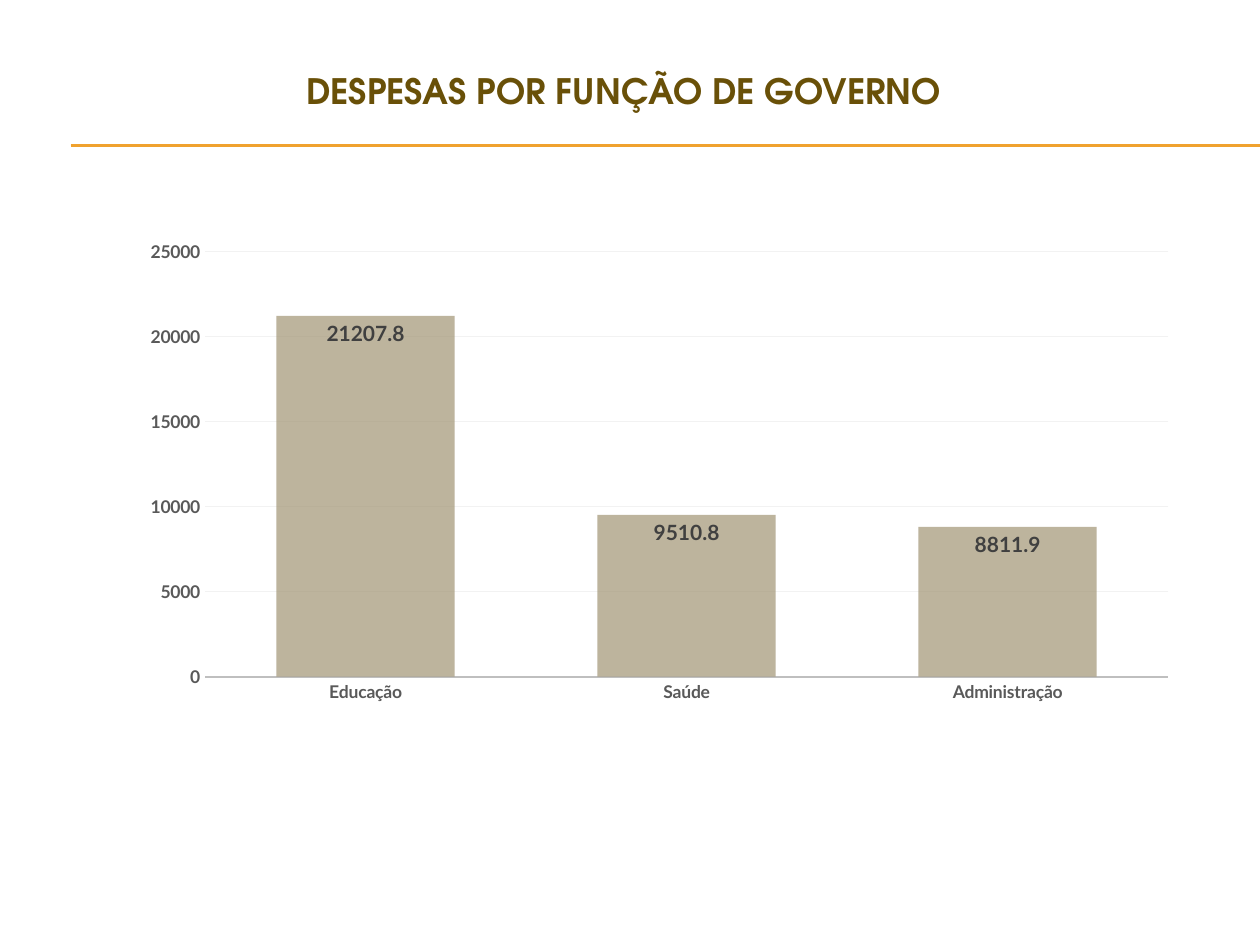
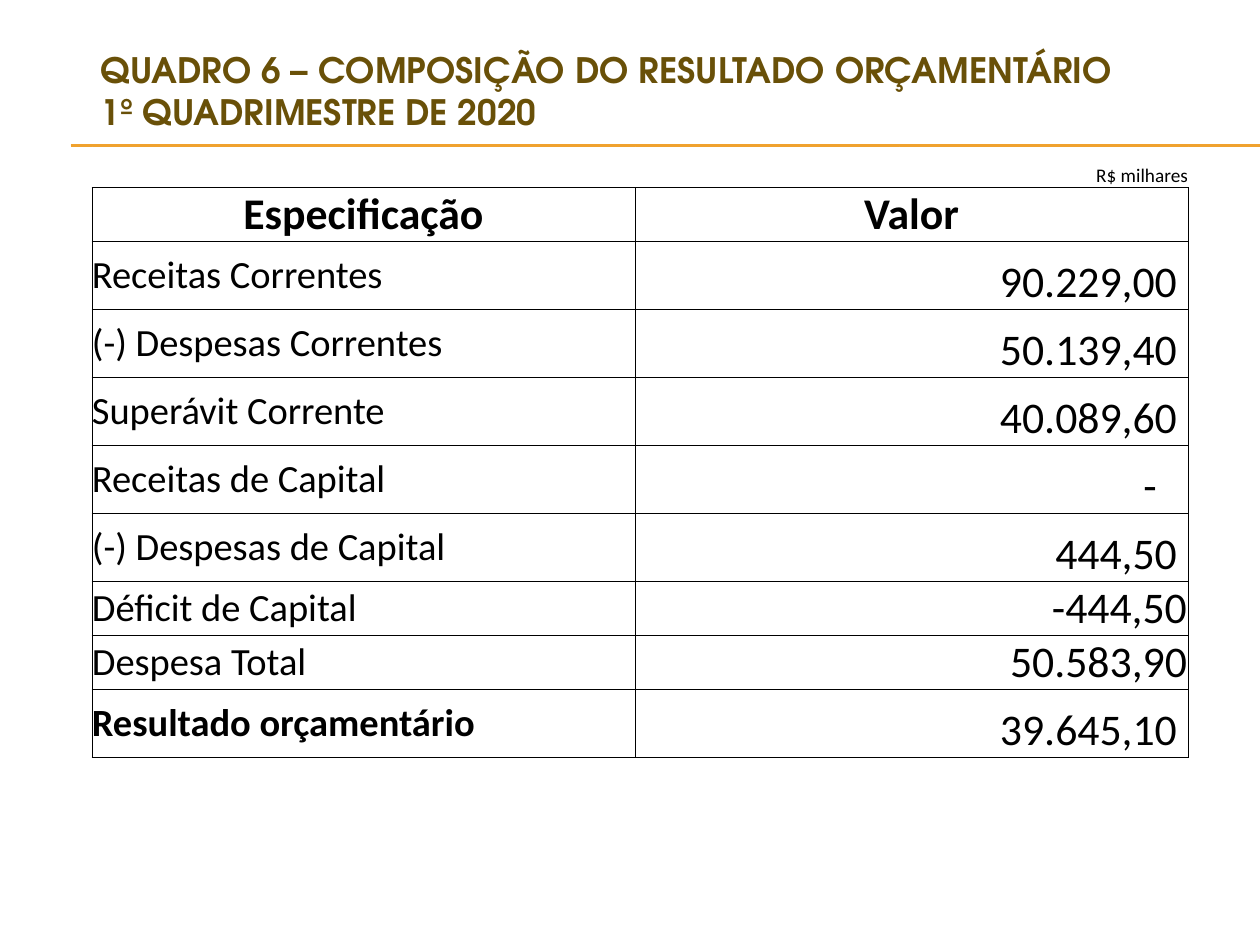
from dataclasses import dataclass

from lxml import etree
from pptx import Presentation
from pptx.chart.data import CategoryChartData
from pptx.dml.color import RGBColor
from pptx.enum.chart import XL_CHART_TYPE, XL_LABEL_POSITION, XL_TICK_MARK
from pptx.enum.shapes import MSO_CONNECTOR
from pptx.enum.text import MSO_ANCHOR, MSO_AUTO_SIZE, PP_ALIGN
from pptx.oxml.ns import qn
from pptx.util import Inches, Pt

LEFT, CENTER, RIGHT = PP_ALIGN.LEFT, PP_ALIGN.CENTER, PP_ALIGN.RIGHT
MIDDLE, BOTTOM = MSO_ANCHOR.MIDDLE, MSO_ANCHOR.BOTTOM
COLUMNS = XL_CHART_TYPE.COLUMN_CLUSTERED
INSIDE_END = XL_LABEL_POSITION.INSIDE_END
NO_TICK = XL_TICK_MARK.NONE
STRAIGHT = MSO_CONNECTOR.STRAIGHT
NO_AUTOFIT = MSO_AUTO_SIZE.NONE


@dataclass(frozen=True)
class Theme:
    title_font: str = "TeX Gyre Adventor"
    chart_font: str = "Lato"
    table_font: str = "Calibri"
    title: str = "695008"
    rule: str = "F0A22E"
    bar: str = "A19574"
    axis_text: str = "595959"
    axis_line: str = "BFBFBF"
    grid: str = "F2F2F2"
    label: str = "404040"
    ink: str = "000000"
    title_size: int = 20
    axis_size: int = 10
    label_size: int = 12
    unit_size: int = 11
    item_size: int = 22
    value_size: int = 25


THEME = Theme()

CHART_TITLE = "DESPESAS POR FUNÇÃO DE GOVERNO"
EXPENSES = {"Educação": 21207.8, "Saúde": 9510.8, "Administração": 8811.9}
PLOT_AREA = {"x": 0.155, "y": 0.144, "w": 0.83, "h": 0.525}

TABLE_TITLE = "QUADRO 6 – COMPOSIÇÃO DO RESULTADO ORÇAMENTÁRIO\v1º QUADRIMESTRE DE 2020"
UNIT = "R$ milhares"
HEADINGS = ("Especificação", "Valor")
FLUSH, INDENTED, DASH = 0.01, 0.09, 0.25
BUDGET_ROWS = [
    ("Receitas Correntes", "90.229,00", INDENTED),
    ("(-) Despesas Correntes", "50.139,40", INDENTED),
    ("Superávit Corrente", "40.089,60", INDENTED),
    ("Receitas de Capital", "-", DASH),
    ("(-) Despesas de Capital", "444,50", INDENTED),
    ("Déficit de Capital", "-444,50", FLUSH),
    ("Despesa Total", "50.583,90", FLUSH),
    ("Resultado orçamentário", "39.645,10", INDENTED),
]
COLUMN_WIDTHS = (4.31, 2.1, 2.29)
UNIT_HEIGHT, HEADING_HEIGHT, TALL_ROW, SHORT_ROW = 0.32, 0.42, 0.54, 0.43
RULE_LEFT, RULE_TOPS = 0.56, (1.15, 1.16)


def style_font(font, name, size, color, bold=False):
    font.name = name
    font.size = Pt(size)
    font.bold = bold
    font.color.rgb = RGBColor.from_string(color)


def style_line(line, color, width):
    line.color.rgb = RGBColor.from_string(color)
    line.width = Pt(width)


def add_titled_slide(presentation, text, alignment):
    slide = presentation.slides.add_slide(presentation.slide_layouts[5])
    title = slide.shapes.title
    title.left, title.top = Inches(0.7), Inches(0.55)
    title.width, title.height = Inches(8.5), Inches(0.33)
    frame = title.text_frame
    frame.text = text
    frame.auto_size = NO_AUTOFIT
    frame.vertical_anchor = MIDDLE
    paragraph = frame.paragraphs[0]
    paragraph.alignment = alignment
    for run in paragraph.runs:
        style_font(run.font, THEME.title_font, THEME.title_size, THEME.title, True)
    return slide


def add_master_rules(presentation, slide):
    master_tree = presentation.slide_master.element.cSld.spTree
    for top in RULE_TOPS:
        rule = slide.shapes.add_connector(
            STRAIGHT, Inches(RULE_LEFT), Inches(top), presentation.slide_width, Inches(top)
        )
        style_line(rule.line, THEME.rule, 0.75)
        etree.SubElement(rule.element.spPr, qn("a:effectLst"))
        master_tree.append(rule.element)


def place_plot_area(chart):
    plot_area = chart.element.find(".//" + qn("c:plotArea"))
    for layout in plot_area.findall(qn("c:layout")):
        plot_area.remove(layout)
    layout = etree.Element(qn("c:layout"))
    plot_area.insert(0, layout)
    manual = etree.SubElement(layout, qn("c:manualLayout"))
    settings = {"layoutTarget": "inner", "xMode": "edge", "yMode": "edge", **PLOT_AREA}
    for name, value in settings.items():
        etree.SubElement(manual, qn(f"c:{name}")).set("val", str(value))


def add_expense_chart(slide):
    data = CategoryChartData()
    data.categories = list(EXPENSES)
    data.add_series("Series 1", list(EXPENSES.values()))
    chart = slide.shapes.add_chart(
        COLUMNS, Inches(0.2), Inches(1.07), Inches(9.21), Inches(6.43), data
    ).chart
    chart.has_title = chart.has_legend = False
    style_font(chart.font, THEME.chart_font, THEME.axis_size, THEME.ink)
    place_plot_area(chart)

    for axis in (chart.category_axis, chart.value_axis):
        axis.major_tick_mark = axis.minor_tick_mark = NO_TICK
        style_font(axis.tick_labels.font, THEME.chart_font, THEME.axis_size, THEME.axis_text, True)
    style_line(chart.category_axis.format.line, THEME.axis_line, 1.25)
    values = chart.value_axis
    values.minimum_scale, values.maximum_scale, values.major_unit = 0, 25000, 5000
    values.format.line.fill.background()
    style_line(values.major_gridlines.format.line, THEME.grid, 0.75)

    plot = chart.plots[0]
    plot.vary_by_categories = False
    plot.gap_width, plot.overlap = 80, 25
    series = plot.series[0]
    series.format.fill.solid()
    series.format.fill.fore_color.rgb = RGBColor.from_string(THEME.bar)
    bar_color = series.format.element if hasattr(series.format, "element") else series._element
    bar_color = bar_color.find(".//" + qn("a:srgbClr"))
    etree.SubElement(bar_color, qn("a:alpha")).set("val", "70000")
    labels = series.data_labels
    labels.show_value = True
    labels.position = INSIDE_END
    style_font(labels.font, THEME.chart_font, THEME.label_size, THEME.label, True)


def draw_borders(cell, edges):
    properties = cell._tc.get_or_add_tcPr()
    for edge in edges:
        line = etree.SubElement(properties, qn(f"a:ln{edge}"), w=str(Pt(0.5)))
        fill = etree.SubElement(line, qn("a:solidFill"))
        etree.SubElement(fill, qn("a:srgbClr"), val=THEME.ink)


def write_cell(cell, text, size, alignment, anchor=BOTTOM, bold=False, right_margin=0):
    cell.vertical_anchor = anchor
    cell.margin_right = Inches(right_margin)
    cell.text_frame.text = text
    paragraph = cell.text_frame.paragraphs[0]
    paragraph.alignment = alignment
    style_font(paragraph.runs[0].font, THEME.table_font, size, THEME.ink, bold)


def add_budget_table(slide):
    heights = [UNIT_HEIGHT, HEADING_HEIGHT]
    heights += [SHORT_ROW if margin == FLUSH else TALL_ROW for _, _, margin in BUDGET_ROWS]
    table = slide.shapes.add_table(
        len(heights), len(COLUMN_WIDTHS), Inches(0.73), Inches(1.17),
        Inches(sum(COLUMN_WIDTHS)), Inches(sum(heights)),
    ).table
    table.first_row = table.horz_banding = False
    for column, width in zip(table.columns, COLUMN_WIDTHS):
        column.width = Inches(width)
    for index, height in enumerate(heights):
        table.rows[index].height = Inches(height)
        for cell in table.rows[index].cells:
            cell.margin_left = cell.margin_right = cell.margin_top = cell.margin_bottom = 0
            draw_borders(cell, "LRTB" if index else "B")
            cell.fill.background()
        if index:
            table.cell(index, 1).merge(table.cell(index, 2))

    write_cell(table.cell(0, 2), UNIT, THEME.unit_size, RIGHT)
    for column, heading in enumerate(HEADINGS):
        write_cell(table.cell(1, column), heading, THEME.value_size, CENTER, bold=True)
    for row, (item, value, margin) in enumerate(BUDGET_ROWS, start=2):
        is_result = row == len(heights) - 1
        write_cell(table.cell(row, 0), item, THEME.item_size, LEFT, MIDDLE, is_result)
        write_cell(table.cell(row, 1), value, THEME.value_size, RIGHT, right_margin=margin)


def main():
    presentation = Presentation()
    presentation.slide_width, presentation.slide_height = Inches(10), Inches(7.5)
    chart_slide = add_titled_slide(presentation, CHART_TITLE, CENTER)
    add_master_rules(presentation, chart_slide)
    add_expense_chart(chart_slide)
    add_budget_table(add_titled_slide(presentation, TABLE_TITLE, LEFT))
    presentation.save("out.pptx")


if __name__ == "__main__":
    main()
